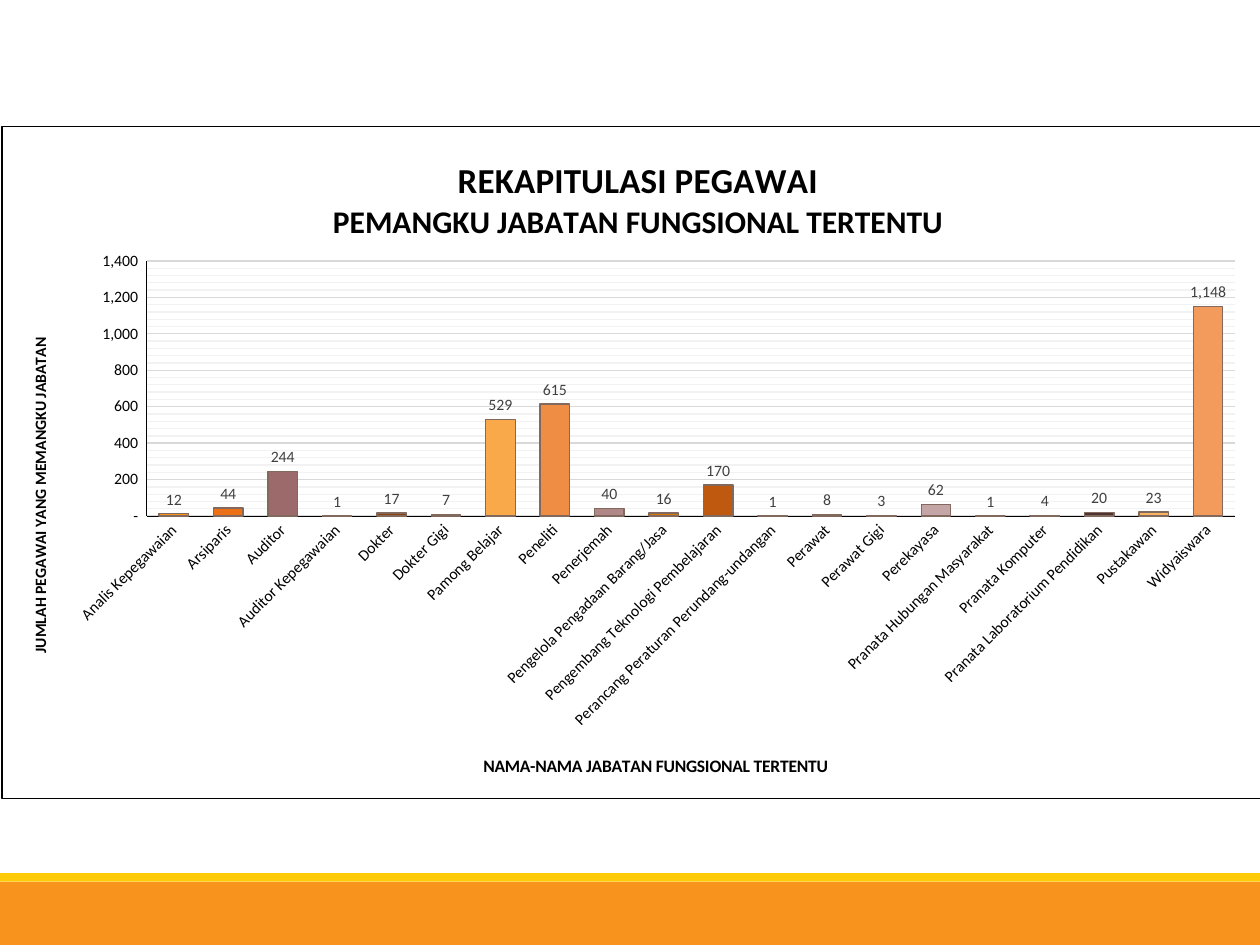
from lxml import etree
from pptx import Presentation
from pptx.chart.data import CategoryChartData as Data
from pptx.dml.color import RGBColor as RGB
from pptx.enum.chart import XL_CHART_TYPE as Kind, XL_LABEL_POSITION as Spot, XL_TICK_MARK as Tick
from pptx.enum.shapes import MSO_SHAPE as Shape
from pptx.oxml import parse_xml
from pptx.oxml.ns import nsdecls, qn
from pptx.util import Inches, Pt

FONT = "Calibri"
FORMAT = '_-* #,##0_-;\\-* #,##0_-;_-* "-"_-;_-@_-'
COLORS = {
    "page": "FFFFFF", "ink": "000000", "label": "404040",
    "base": "F8931D", "stripe": "FFCA08",
    "edge": "82695E", "major": "D9D9D9", "minor": "F2F2F2",
}
# Position name, number of staff, column colour
STAFF = [
    ("Analis Kepegawaian", 12, "F8931D"),
    ("Arsiparis", 44, "EC7016"),
    ("Auditor", 244, "9C6A6A"),
    ("Auditor Kepegawaian", 1, "A15905"),
    ("Dokter", 17, "8F430C"),
    ("Dokter Gigi", 7, "5E3F3F"),
    ("Pamong Belajar", 529, "F9A94A"),
    ("Peneliti", 615, "F08D45"),
    ("Penerjemah", 40, "B08888"),
    ("Pengelola Pengadaan Barang/Jasa", 16, "D77707"),
    ("Pengembang Teknologi Pembelajaran", 170, "BF5910"),
    ("Perancang Peraturan Perundang-undangan", 1, "7E5454"),
    ("Perawat", 8, "FBBE77"),
    ("Perawat Gigi", 3, "F4A973"),
    ("Perekayasa", 62, "C4A6A6"),
    ("Pranata Hubungan Masyarakat", 1, "864A04"),
    ("Pranata Komputer", 4, "77380A"),
    ("Pranata Laboratorium Pendidikan", 20, "4F3434"),
    ("Pustakawan", 23, "FAB361"),
    ("Widyaiswara", 1148, "F29B5C"),
]


def color(name):
    return RGB.from_string(COLORS.get(name, name))


def style(font, size, name="ink", bold=False):
    font.name, font.size, font.bold = FONT, Pt(size), bold
    font.color.rgb = color(name)


def stroke(line, name, width):
    line.color.rgb = color(name)
    line.width = Pt(width)


def outline(name, width, fill=""):
    """Chart part format with a line, for parts without a format object."""
    paint = "<a:solidFill><a:srgbClr val='{}'/></a:solidFill>"
    inside = paint.format(COLORS[fill]) if fill else ""
    return parse_xml(
        f"<c:spPr {nsdecls('c', 'a')}>{inside}"
        f"<a:ln w='{Pt(width)}'>{paint.format(COLORS[name])}</a:ln></c:spPr>")


def place(parent, index, inner=False, **box):
    """Put a chart part at shares of the chart's size."""
    for old in parent.findall(qn("c:layout")):
        parent.remove(old)
    layout = parse_xml(f"<c:layout {nsdecls('c')}><c:manualLayout/></c:layout>")
    rules = [("layoutTarget", "inner")] if inner else []
    rules += [("xMode", "edge"), ("yMode", "edge"), *box.items()]
    for tag, val in rules:
        etree.SubElement(layout[0], qn(f"c:{tag}")).set("val", str(val))
    parent.insert(index, layout)


def caption(title, lines, sizes, x, y, turn=0):
    """Write a bold chart or axis title."""
    frame = title.text_frame
    frame.text = "\n".join(lines)
    for para, size in zip(frame.paragraphs, sizes):
        style(para.font, size, bold=True)
    body = title._element.find(".//" + qn("a:bodyPr"))
    body.set("rot", str(turn * 60000))
    body.set("vert", "horz")
    place(title._element, 1, x=x, y=y)


def draw_footer(slide, box):
    """Base band with a thin stripe along its top."""
    left, top, width, height = box
    thin = height * 0.12
    for name, y, tall in (("base", top + thin, height - thin), ("stripe", top, thin)):
        band = slide.shapes.add_shape(Shape.RECTANGLE, left, int(y), width, int(tall))
        band.shadow.inherit = False
        band.fill.solid()
        band.fill.fore_color.rgb = color(name)
        band.line.fill.background()


def draw_axes(chart):
    cat, val = chart.category_axis, chart.value_axis
    for axis in (cat, val):
        axis.major_tick_mark = axis.minor_tick_mark = Tick.NONE
        style(axis.tick_labels.font, 9)
        stroke(axis.format.line, "ink", 0.5)
    cat._element.find(qn("c:txPr")).find(qn("a:bodyPr")).set("rot", str(-45 * 60000))
    val.minimum_scale, val.maximum_scale = 0, 1400
    val.major_unit, val.minor_unit = 200, 40
    val.has_major_gridlines = val.has_minor_gridlines = True
    stroke(val.major_gridlines.format.line, "major", 0.75)
    val._element.find(qn("c:minorGridlines")).append(outline("minor", 0.75))
    val.tick_labels.number_format = FORMAT
    val.tick_labels.number_format_is_linked = False
    caption(cat.axis_title, ["NAMA-NAMA JABATAN FUNGSIONAL TERTENTU"], [10], 0.38, 0.93)
    caption(val.axis_title, ["JUMLAH PEGAWAI YANG MEMANGKU JABATAN"], [9],
            0.02, 0.31, turn=-90)


def draw_columns(plot):
    plot.gap_width = 85
    plot.vary_by_categories = False
    series = plot.series[0]
    for i, (_, _, shade) in enumerate(STAFF):
        look = series.points[i].format
        look.fill.solid()
        look.fill.fore_color.rgb = color(shade)
        stroke(look.line, "edge", 0.75)
    plot.has_data_labels = True
    labels = plot.data_labels
    labels.show_value = True
    labels.position = Spot.OUTSIDE_END
    labels.number_format = FORMAT
    labels.number_format_is_linked = False
    style(labels.font, 9, "label")


def draw_chart(slide, box):
    data = Data(number_format=FORMAT)
    data.categories = [name for name, _, _ in STAFF]
    data.add_series("Series 1", [count for _, count, _ in STAFF])
    chart = slide.shapes.add_chart(Kind.COLUMN_CLUSTERED, *box, data).chart
    style(chart.font, 10)
    chart.has_legend = False
    chart.has_title = True
    caption(chart.chart_title,
            ["REKAPITULASI PEGAWAI", "PEMANGKU JABATAN FUNGSIONAL TERTENTU"],
            [20, 18], 0.26, 0.04)
    draw_axes(chart)
    draw_columns(chart.plots[0])
    root = chart._chartSpace.find(qn("c:chart"))
    place(root.find(qn("c:plotArea")), 0, inner=True, x=0.115, y=0.2, w=0.865, h=0.38)
    # Frame around the chart
    root.addnext(outline("ink", 0.75, fill="page"))


def main():
    prs = Presentation()
    prs.slide_width, prs.slide_height = Inches(10), Inches(7.5)
    wide = prs.slide_width
    slide = prs.slides.add_slide(prs.slide_layouts[6])
    draw_footer(slide, (0, Inches(6.93), wide, Inches(0.57)))
    draw_chart(slide, (Inches(0.01), Inches(1), wide, Inches(5.34)))
    prs.save("out.pptx")


if __name__ == "__main__":
    main()
